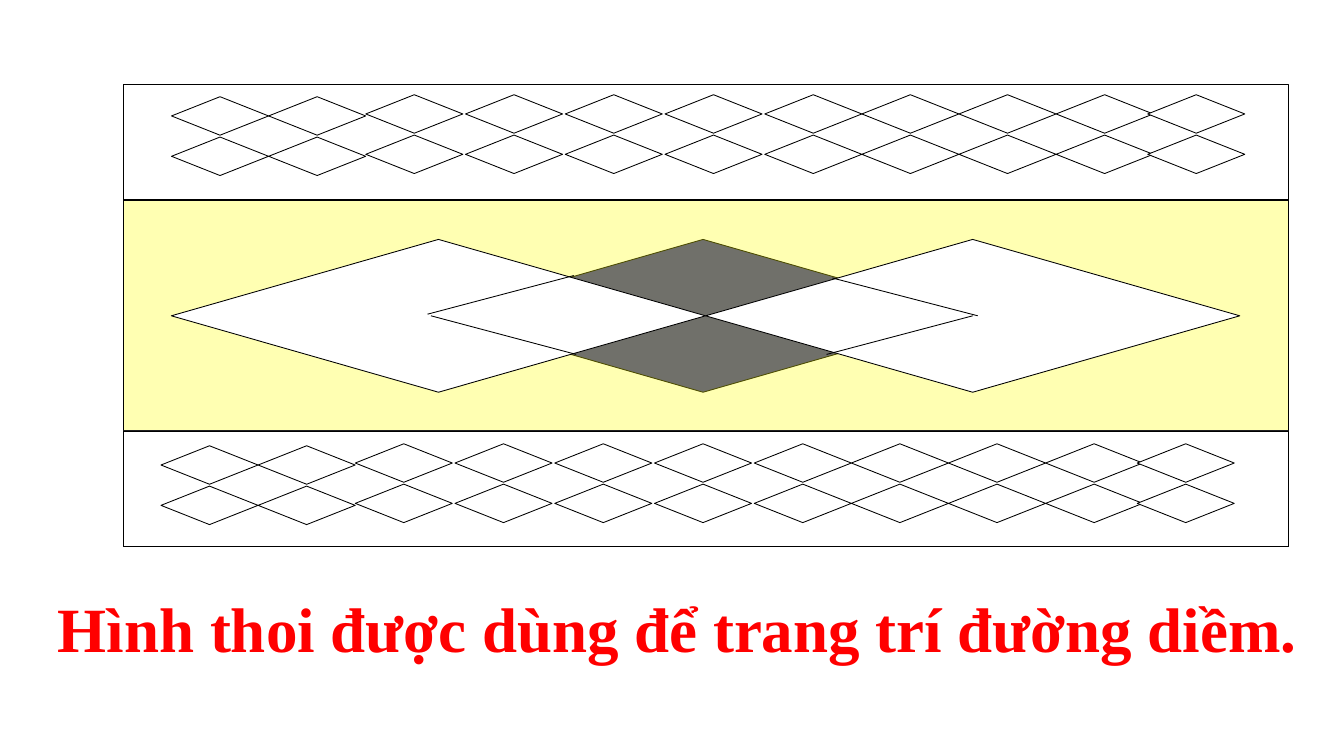
from itertools import accumulate

from lxml import etree
from pptx import Presentation
from pptx.dml.color import RGBColor
from pptx.enum.shapes import MSO_CONNECTOR, MSO_SHAPE
from pptx.enum.text import MSO_ANCHOR, MSO_AUTO_SIZE, PP_ALIGN
from pptx.oxml.ns import qn
from pptx.util import Pt

DIAMOND = MSO_SHAPE.DIAMOND
RECTANGLE = MSO_SHAPE.RECTANGLE
STRAIGHT = MSO_CONNECTOR.STRAIGHT
BOTTOM = MSO_ANCHOR.BOTTOM
NO_AUTOFIT = MSO_AUTO_SIZE.NONE
CENTER = PP_ALIGN.CENTER
TITLE_ONLY = 5


def colour(value):
    return RGBColor.from_string(value)


def write(para, text, font="Times New Roman", size=54, color="000000", bold=False, align=CENTER):
    para.alignment = align
    span = para.add_run()
    span.text = text
    span.font.name = font
    span.font.size = Pt(size)
    span.font.bold = bold
    span.font.color.rgb = colour(color)


class Frieze:
    ink = "000000"
    paper = "FFFFFF"
    stroke = 0.75

    def __init__(self, slide):
        self.slide = slide

    def outline(self, item, weight):
        item.line.color.rgb = colour(self.ink)
        item.line.width = Pt(weight)

    def caption(self, text, left, top, width, height):
        box = self.slide.shapes.title
        box.left, box.top, box.width, box.height = map(Pt, (left, top, width, height))
        frame = box.text_frame
        frame.word_wrap = True
        frame.auto_size = NO_AUTOFIT
        frame.vertical_anchor = BOTTOM
        frame.margin_left = frame.margin_right = Pt(10)
        frame.margin_top, frame.margin_bottom = Pt(5), Pt(2)
        write(frame.paragraphs[0], text, color="FF0000", bold=True)

    def shape(self, kind, left, top, width, height, fill=paper, opacity=100, weight=stroke):
        shape = self.slide.shapes.add_shape(kind, *map(Pt, (left, top, width, height)))
        shape.shadow.inherit = False
        self.outline(shape, weight)
        if fill is None:
            shape.fill.background()
            return
        shape.fill.solid()
        shape.fill.fore_color.rgb = colour(fill)
        if opacity < 100:
            tone = shape.fill._xPr.find(qn("a:solidFill"))[0]
            etree.SubElement(tone, qn("a:alpha"), val=str(opacity * 1000))

    def line(self, *ends):
        line = self.slide.shapes.add_connector(STRAIGHT, *map(Pt, ends))
        self.outline(line, self.stroke)
        etree.SubElement(line._element.spPr, qn("a:effectLst"))

    def border(self, left, top):
        steps = [83.25] * 2 + [85.5] * 4 + [83.25] * 3 + [78.5]
        for column, x in enumerate(accumulate(steps, initial=left)):
            drop = 1.7 if column < 2 else 0
            for row in range(2):
                self.shape(DIAMOND, x, top + drop + row * 34.6, 83.2, 33)


def main():
    deck = Presentation()
    deck.slide_width, deck.slide_height = Pt(1152), Pt(648)
    frieze = Frieze(deck.slides.add_slide(deck.slide_layouts[TITLE_ONLY]))
    frieze.caption("Hình thoi được dùng để trang trí đường diềm.", 28.8, 496.8, 1103.8, 75.6)

    left, width = 105.8, 998.6
    large = {"top": 205.2, "width": 457.9, "height": 131}
    frieze.shape(DIAMOND, 373.7, fill="333399", **large)
    frieze.shape(RECTANGLE, left, 74.2, width, 393.8, fill=None, weight=1)
    frieze.shape(RECTANGLE, left, 172.1, width, 197.3, fill="FFFF00", opacity=30)
    for x in (604.8, 146.9):
        frieze.shape(DIAMOND, x, **large)

    for ends in (
        (491.8, 236.2, 366.5, 269.3),
        (493.9, 303.8, 369.4, 270.7),
        (833.8, 270.7, 708.5, 303.8),
        (838.1, 270.7, 713.5, 238.3),
    ):
        frieze.line(*ends)

    for top in (72, 369.4):
        frieze.shape(RECTANGLE, left, top, width, 98.6)
    frieze.border(147, 81.2)
    frieze.border(138, 380.4)
    deck.save("out.pptx")


if __name__ == "__main__":
    main()
